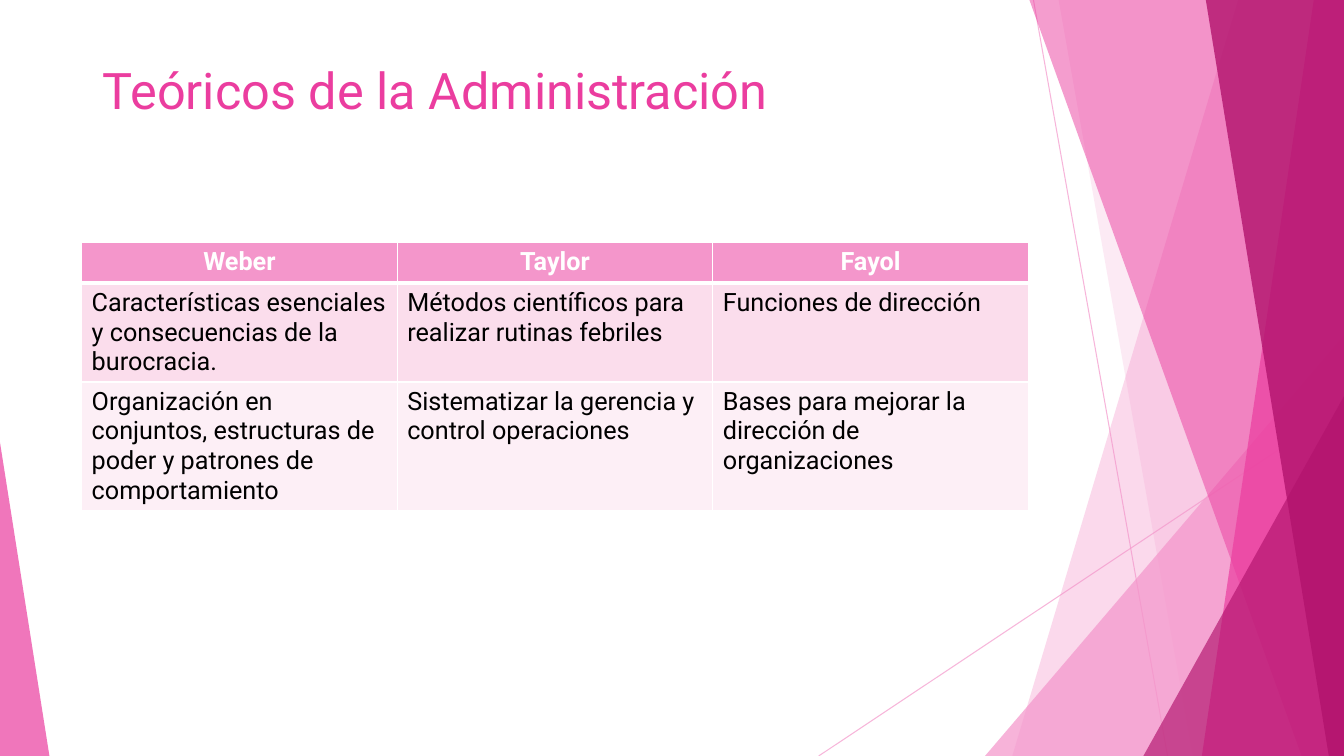
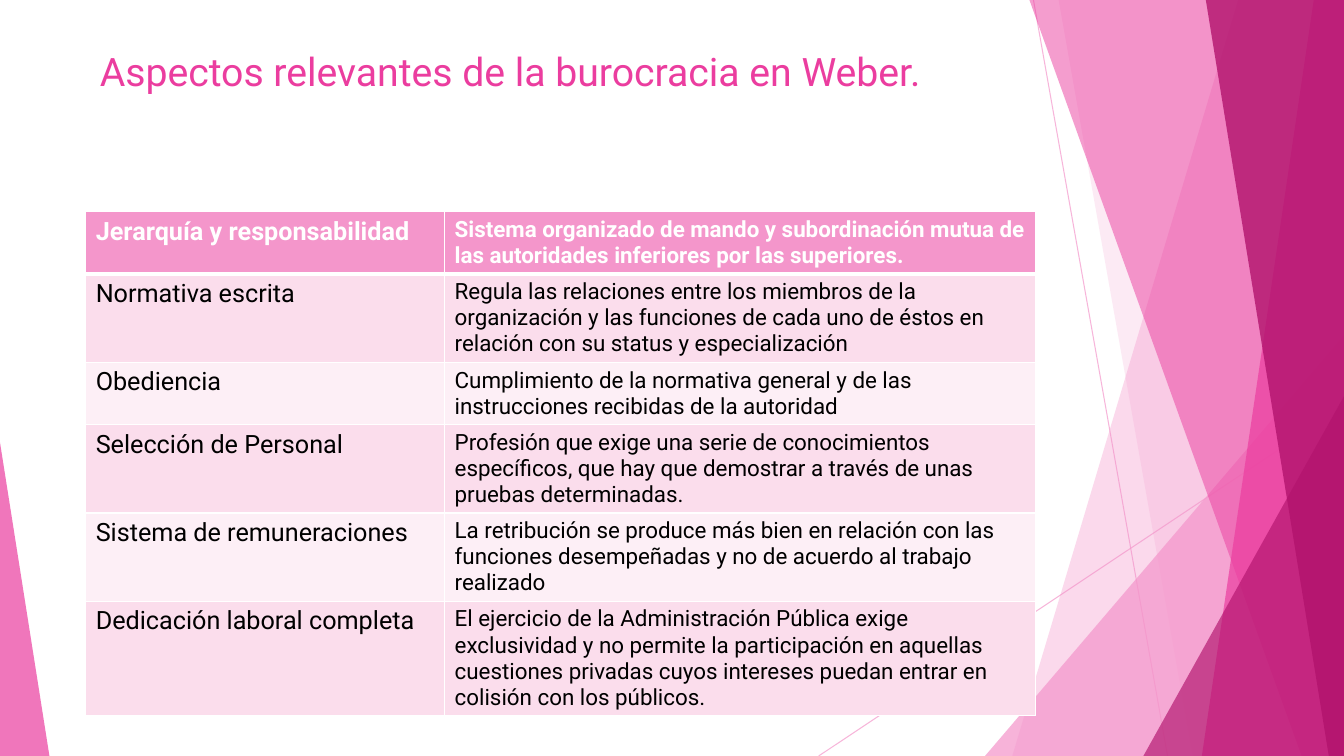
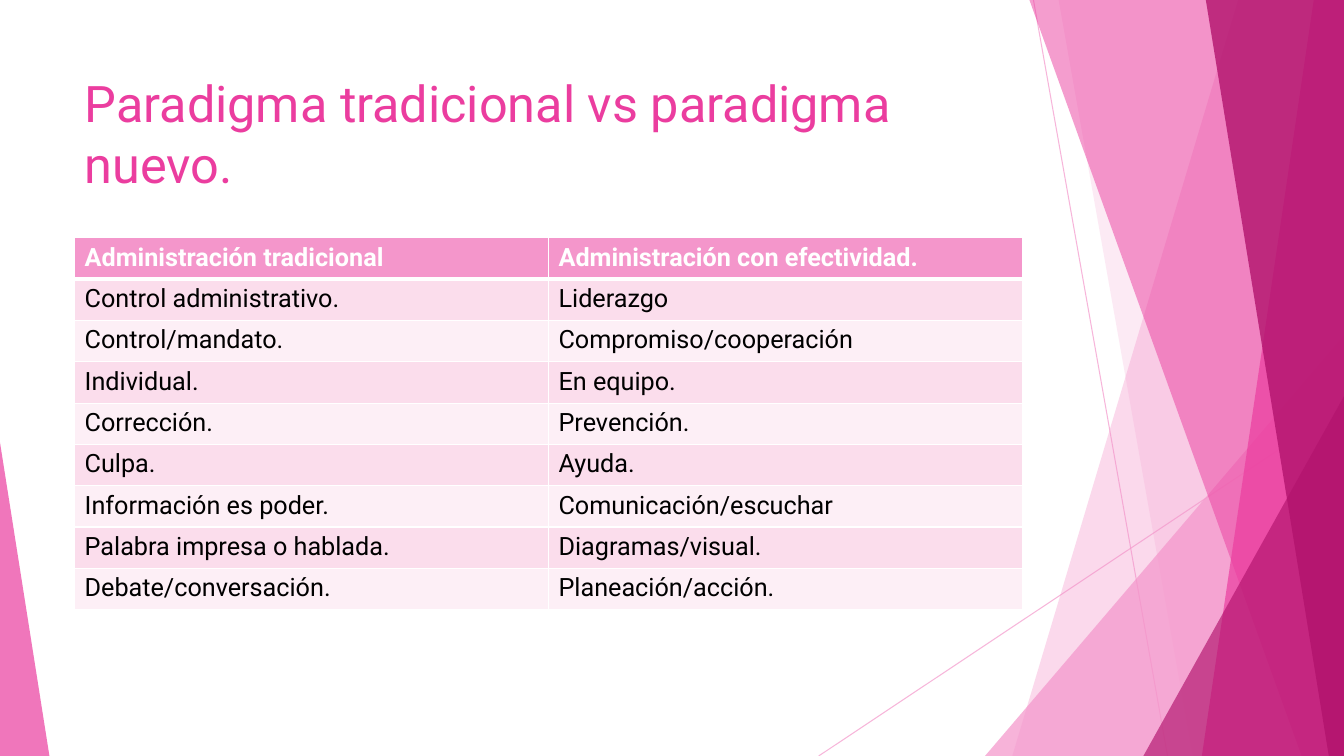
from lxml.etree import SubElement
from pptx import Presentation
from pptx.dml.color import RGBColor
from pptx.enum.shapes import MSO_CONNECTOR, MSO_SHAPE
from pptx.enum.text import MSO_ANCHOR, MSO_AUTO_SIZE, PP_ALIGN
from pptx.oxml import parse_xml
from pptx.oxml.ns import nsdecls, qn
from pptx.util import Inches, Pt

WIDTH, HEIGHT = 13.33, 7.5
FONT = "Roboto"
COLORS = {
    "white": "FFFFFF",
    "black": "000000",
    "light": "F496CB",
    "pink": "EB3D9F",
    "dark": "B2136D",
    "odd_row": "FBDDEC",
    "even_row": "FDEFF6",
}

# Ends of each thin line: x1, y1, x2, y2
RAYS = [(10.25, 0, 11.58, HEIGHT), (WIDTH, 4.03, 8.12, HEIGHT)]

# Bands run to the right edge: top-left x, bottom-left x, colour, opacity
BACK_BANDS = [(12.28, 10.04, "light", 36), (10.5, 11.83, "light", 20)]
FRONT_BANDS = [
    (10.21, 12.91, "pink", 50),
    (13.03, 11.92, "pink", 70),
    (11.96, 13.18, "dark", 80),
]

AUTHORS = [
    ("Weber", "Taylor", "Fayol"),
    (
        "Características esenciales y consecuencias de la burocracia.",
        "Métodos científicos para realizar rutinas febriles",
        "Funciones de dirección",
    ),
    (
        "Organización en conjuntos, estructuras de poder y patrones de comportamiento",
        "Sistematizar la gerencia y control operaciones",
        "Bases para mejorar la dirección de organizaciones",
    ),
]

BUREAUCRACY = [
    (
        "Jerarquía y responsabilidad",
        "Sistema organizado de mando y subordinación mutua de las autoridades "
        "inferiores por las superiores.",
    ),
    (
        "Normativa escrita",
        "Regula las relaciones entre los miembros de la organización y las funciones "
        "de cada uno de éstos en relación con su status y especialización",
    ),
    (
        "Obediencia",
        "Cumplimiento de la normativa general y de las instrucciones recibidas "
        "de la autoridad",
    ),
    (
        "Selección de Personal",
        "Profesión que exige una serie de conocimientos específicos, que hay que "
        "demostrar a través de unas pruebas determinadas.",
    ),
    (
        "Sistema de remuneraciones",
        "La retribución se produce más bien en relación con las funciones "
        "desempeñadas y no de acuerdo al trabajo realizado",
    ),
    (
        "Dedicación laboral completa",
        "El ejercicio de la Administración Pública exige exclusividad y no permite la "
        "participación en aquellas cuestiones privadas cuyos intereses puedan entrar "
        "en colisión con los públicos.",
    ),
]

PARADIGMS = [
    ("Administración tradicional", "Administración con efectividad."),
    ("Control administrativo.", "Liderazgo"),
    ("Control/mandato.", "Compromiso/cooperación"),
    ("Individual.", "En equipo."),
    ("Corrección.", "Prevención."),
    ("Culpa.", "Ayuda."),
    ("Información es poder.", "Comunicación/escuchar"),
    ("Palabra impresa o hablada.", "Diagramas/visual."),
    ("Debate/conversación.", "Planeación/acción."),
]


def rgb(name):
    return RGBColor.from_string(COLORS[name])


def set_opacity(shape, percent):
    for color in shape.element.iter(qn("a:srgbClr")):
        SubElement(color, qn("a:alpha")).set("val", str(percent * 1000))


def paint(shape, color, opacity):
    shape.shadow.inherit = False
    shape.fill.solid()
    shape.fill.fore_color.rgb = rgb(color)
    shape.line.fill.background()
    set_opacity(shape, opacity)


def add_ray(shapes, ends):
    ray = shapes.add_connector(MSO_CONNECTOR.STRAIGHT, *map(Inches, ends))
    ray.line.color.rgb = rgb("light")
    ray.line.width = Pt(0.75)
    SubElement(ray.element.spPr, qn("a:effectLst"))
    set_opacity(ray, 70)


def add_band(shapes, top_x, bottom_x, color, opacity):
    builder = shapes.build_freeform(Inches(top_x), 0)
    corners = [(WIDTH, 0), (WIDTH, HEIGHT), (bottom_x, HEIGHT)]
    builder.add_line_segments([(Inches(x), Inches(y)) for x, y in corners], close=True)
    paint(builder.convert_to_shape(), color, opacity)


def add_corner(shapes, left, top, width, apex, color, opacity):
    """Add a triangle standing on the bottom edge; apex 0 is left, 1 is right."""
    box = map(Inches, (left, top, width, HEIGHT - top))
    corner = shapes.add_shape(MSO_SHAPE.ISOSCELES_TRIANGLE, *box)
    corner.adjustments[0] = apex
    paint(corner, color, opacity)


def add_backdrop(shapes):
    for ends in RAYS:
        add_ray(shapes, ends)
    for band in BACK_BANDS:
        add_band(shapes, *band)
    add_corner(shapes, 9.77, 3.33, 3.56, 1, "light", 72)
    for band in FRONT_BANDS:
        add_band(shapes, *band)
    add_corner(shapes, 11.34, 3.93, 1.99, 1, "dark", 66)
    add_corner(shapes, 0, 4.39, 0.49, 0, "pink", 70)


def move_backdrop_to_layout(slide, layout):
    """Draw the backdrop with the slide's tools, then hand it to the layout."""
    for placeholder in list(layout.placeholders)[1:]:
        layout.shapes.element.remove(placeholder.element)
    add_backdrop(slide.shapes)
    for shape in list(slide.shapes):
        if not shape.is_placeholder:
            layout.shapes.element.append(shape.element)


def write(paragraph, text, size, color, bold=False):
    run = paragraph.add_run()
    run.text = text
    run.font.name = FONT
    run.font.size = Pt(size)
    run.font.bold = bold
    run.font.color.rgb = rgb(color)


def set_title(slide, text, left, top, size):
    title = slide.shapes.title
    title.left, title.top, title.width, title.height = map(Inches, (left, top, 9.4, 1.44))
    frame = title.text_frame
    frame.word_wrap = True
    frame.auto_size = MSO_AUTO_SIZE.NONE
    frame.vertical_anchor = MSO_ANCHOR.TOP
    paragraph = frame.paragraphs[0]
    paragraph.alignment = PP_ALIGN.LEFT
    write(paragraph, text, size, "pink")


def set_borders(cell, row):
    widths = {"L": 1, "R": 1, "T": 3 if row == 1 else 1, "B": 3 if row == 0 else 1}
    properties = cell._tc.get_or_add_tcPr()
    for index, (side, points) in enumerate(widths.items()):
        border = parse_xml(
            f'<a:ln{side} {nsdecls("a")} w="{Pt(points)}"><a:solidFill>'
            f'<a:srgbClr val="{COLORS["white"]}"/></a:solidFill></a:ln{side}>'
        )
        properties.insert(index, border)


def add_grid(slide, left, top, widths, heights, rows, sizes, header_align=PP_ALIGN.LEFT):
    """Add a banded table; sizes holds the text size of each column."""
    box = map(Inches, (left, top, sum(widths), sum(heights)))
    table = slide.shapes.add_table(len(rows), len(widths), *box).table
    for column, width in zip(table.columns, widths):
        column.width = Inches(width)
    for row, (texts, height) in enumerate(zip(rows, heights)):
        table.rows[row].height = Inches(height)
        header = row == 0
        fill = "light" if header else "odd_row" if row % 2 else "even_row"
        for column, text in enumerate(texts):
            cell = table.cell(row, column)
            cell.fill.solid()
            cell.fill.fore_color.rgb = rgb(fill)
            set_borders(cell, row)
            paragraph = cell.text_frame.paragraphs[0]
            paragraph.alignment = header_align if header else PP_ALIGN.LEFT
            write(paragraph, text, sizes[column], "white" if header else "black", header)


def main():
    presentation = Presentation()
    presentation.slide_width = Inches(WIDTH)
    presentation.slide_height = Inches(HEIGHT)
    layout = presentation.slide_layouts.get_by_name("Title Only")

    authors, bureaucracy, paradigms = [
        presentation.slides.add_slide(layout) for _ in range(3)
    ]
    move_backdrop_to_layout(authors, layout)

    set_title(authors, "Teóricos de la Administración", 0.92, 0.54, 36)
    add_grid(authors, 0.81, 2.4, [3.13] * 3, [0.41, 0.98, 1.28],
             AUTHORS, [18] * 3, PP_ALIGN.CENTER)

    set_title(bureaucracy, "Aspectos relevantes de la burocracia en Weber.", 0.89, 0.42, 28)
    add_grid(bureaucracy, 0.85, 2.1, [3.56, 5.86], [0.62, 0.87, 0.62, 0.87, 0.87, 1.13],
             BUREAUCRACY, [18, 16])

    set_title(paradigms, "Paradigma tradicional vs paradigma nuevo.", 0.74, 0.67, 36)
    add_grid(paradigms, 0.74, 2.36, [4.7] * 2, [0.41] * len(PARADIGMS), PARADIGMS, [18] * 2)

    presentation.save("out.pptx")


if __name__ == "__main__":
    main()
